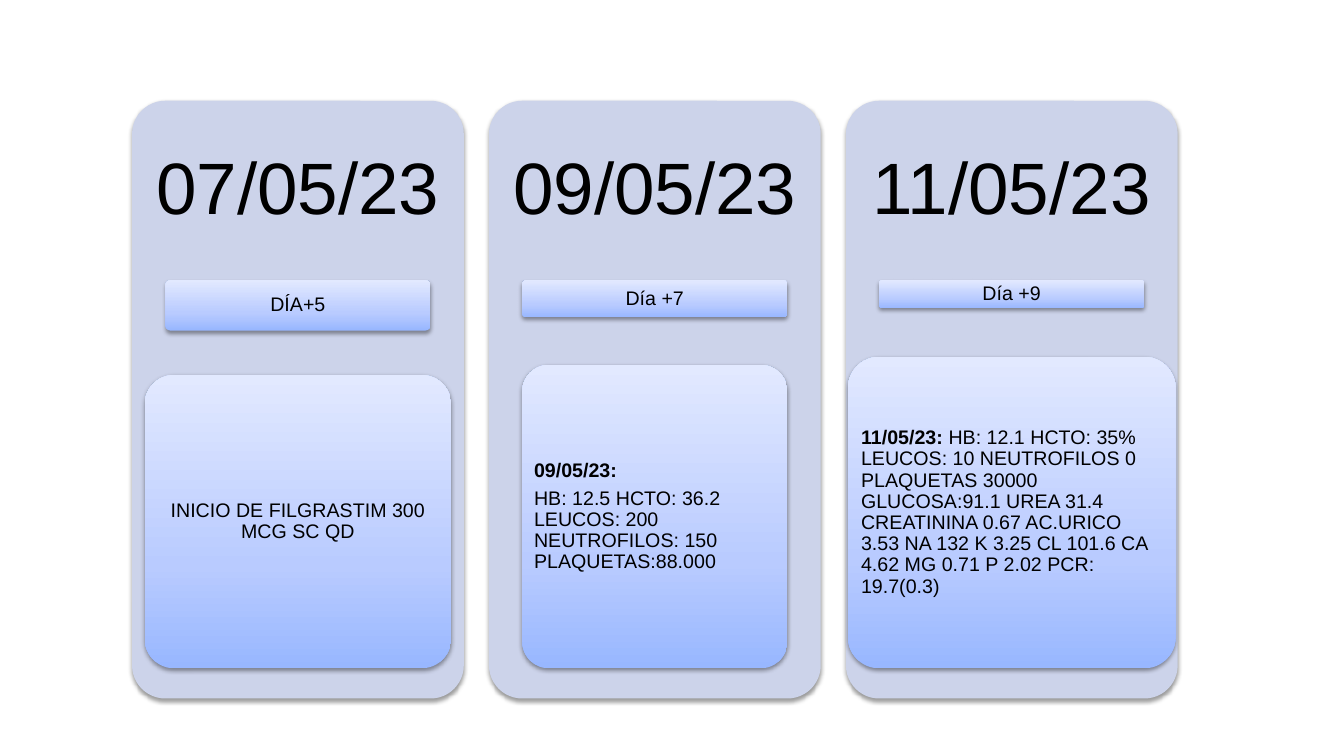
from lxml import etree
from pptx import Presentation
from pptx.dml.color import RGBColor
from pptx.enum.shapes import MSO_SHAPE
from pptx.enum.text import MSO_ANCHOR, PP_ALIGN
from pptx.oxml import parse_xml
from pptx.oxml.ns import nsdecls, qn
from pptx.util import Inches, Pt

ROUND = MSO_SHAPE.ROUNDED_RECTANGLE
MIDDLE = MSO_ANCHOR.MIDDLE
LEFT, CENTER = PP_ALIGN.LEFT, PP_ALIGN.CENTER


def color(code):
    return RGBColor.from_string(code)


def write(frame, paras, size=14, align=CENTER, ink="000000", font="Arial",
          inset=(0.04, 0.03), gap=4.9):
    """Fill a frame; each paragraph is a list of (text, bold) runs."""
    frame.word_wrap = True
    frame.vertical_anchor = MIDDLE
    frame.margin_left = frame.margin_right = Inches(inset[0])
    frame.margin_top = frame.margin_bottom = Inches(inset[1])
    for i, runs in enumerate(paras):
        para = frame.add_paragraph() if i else frame.paragraphs[0]
        para.alignment = align
        para.line_spacing = 0.9
        if i:
            para.space_before = Pt(gap)
        for text, bold in runs:
            run = para.add_run()
            run.text = text
            run.font.name, run.font.size, run.font.bold = font, Pt(size), bold
            run.font.color.rgb = color(ink)


class Board:
    back = "CCD3EA"
    stops = ((0, "98B7FF"), (35, "B9CBFF"), (100, "E2E9FF"))

    def __init__(self, slide):
        self.slide = slide

    def block(self, *box):
        """Rounded block with a soft shadow below it."""
        shape = self.slide.shapes.add_shape(ROUND, *map(Inches, box))
        shape.adjustments[0] = 0.1
        shape.line.fill.background()
        shape.shadow.inherit = False
        effects = shape._element.spPr.find(qn("a:effectLst"))
        effects.append(parse_xml(
            f'<a:outerShdw {nsdecls("a")} blurRad="{Pt(3.1)}" dist="{Pt(1.6)}" '
            'dir="5400000" rotWithShape="0"><a:srgbClr val="000000">'
            '<a:alpha val="38000"/></a:srgbClr></a:outerShdw>'))
        return shape

    def panel(self, *box):
        shape = self.block(*box)
        shape.fill.solid()
        shape.fill.fore_color.rgb = color(self.back)

    def card(self, *box, paras, align=CENTER):
        shape = self.block(*box)
        shape.fill.gradient()
        shape.fill.gradient_angle = 90
        stops = shape._element.spPr.find(".//" + qn("a:gsLst"))
        for old in list(stops):
            stops.remove(old)
        for pos, code in self.stops:
            stop = etree.SubElement(stops, qn("a:gs"), pos=str(pos * 1000))
            etree.SubElement(stop, qn("a:srgbClr"), val=code)
        write(shape.text_frame, paras, align=align)

    def date(self, *box, text):
        label = self.slide.shapes.add_textbox(*map(Inches, box))
        write(label.text_frame, [[(text, False)]], size=52, inset=(0.22, 0.22))


# Date, day, day height, card width, card top, alignment, card text
DAYS = (
    ("07/05/23", "DÍA+5", 0.5, 3.04, 3.72, CENTER,
     [[("INICIO DE FILGRASTIM 300 MCG SC QD", False)]]),
    ("09/05/23", "Día +7", 0.37, 2.63, 3.62, LEFT,
     [[("09/05/23:", True)],
      [("HB: 12.5 HCTO: 36.2 LEUCOS: 200 NEUTROFILOS: 150 "
        "PLAQUETAS:88.000", False)]]),
    ("11/05/23", "Día +9", 0.28, 3.25, 3.54, LEFT,
     [[("11/05/23: ", True),
       ("HB: 12.1 HCTO: 35% LEUCOS: 10 NEUTROFILOS 0 PLAQUETAS 30000 "
        "GLUCOSA:91.1 UREA 31.4 CREATININA 0.67 AC.URICO 3.53 NA 132 K 3.25 "
        "CL 101.6 CA 4.62 MG 0.71 P 2.02 PCR: 19.7(0.3)", False)]]),
)
X, Y, WIDE, TALL, STEP = 1.31, 1, 3.29, 5.93, 3.54
HEAD, TAG, END = 1.78, 2.63, 6.63


def main():
    deck = Presentation()
    deck.slide_width, deck.slide_height = Inches(13.33), Inches(7.5)
    board = Board(deck.slides.add_slide(deck.slide_layouts[6]))

    # One column per day
    for i, (date, day, high, width, top, align, paras) in enumerate(DAYS):
        left = X + i * STEP
        board.panel(left, Y, WIDE, TALL)
        board.date(left, Y, WIDE, HEAD, text=date)
        board.card(left + (WIDE - TAG) / 2, Y + HEAD, TAG, high,
                   paras=[[(day, False)]])
        board.card(left + (WIDE - width) / 2, top, width, END - top,
                   paras=paras, align=align)

    deck.save("out.pptx")


if __name__ == "__main__":
    main()
